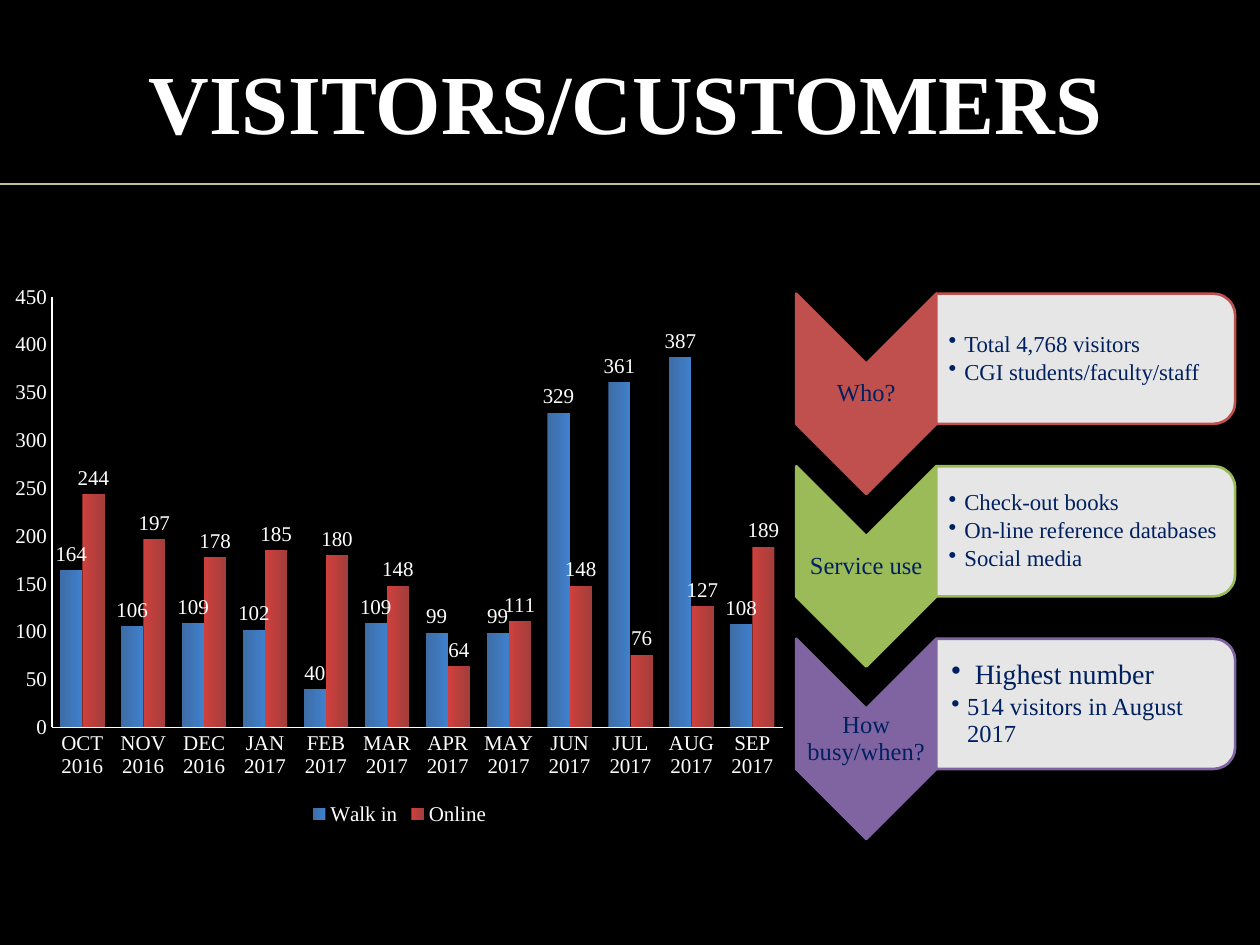
from lxml import etree
from pptx import Presentation
from pptx.chart.data import CategoryChartData
from pptx.dml.color import RGBColor
from pptx.enum.chart import XL_CHART_TYPE, XL_LABEL_POSITION, XL_LEGEND_POSITION, XL_TICK_MARK
from pptx.enum.shapes import MSO_CONNECTOR, MSO_SHAPE
from pptx.enum.text import MSO_ANCHOR, PP_ALIGN
from pptx.oxml import parse_xml
from pptx.oxml.ns import nsdecls, qn
from pptx.util import Pt

COLUMNS = XL_CHART_TYPE.COLUMN_CLUSTERED
OUTSIDE = XL_LABEL_POSITION.OUTSIDE_END
BOTTOM = XL_LEGEND_POSITION.BOTTOM
NO_TICK = XL_TICK_MARK.NONE
STRAIGHT = MSO_CONNECTOR.STRAIGHT
CHEVRON = MSO_SHAPE.CHEVRON
ROUNDED = MSO_SHAPE.ROUND_2_SAME_RECTANGLE
MIDDLE = MSO_ANCHOR.MIDDLE
CENTER, LEFT = PP_ALIGN.CENTER, PP_ALIGN.LEFT

FONT = "Times New Roman"
BLACK = RGBColor(0x00, 0x00, 0x00)
WHITE = RGBColor(0xFF, 0xFF, 0xFF)
NAVY = RGBColor(0x00, 0x20, 0x60)
TAN = RGBColor(0xC4, 0xBD, 0x97)
RED = RGBColor(0xC0, 0x50, 0x4D)
GREEN = RGBColor(0x9B, 0xBB, 0x59)
PURPLE = RGBColor(0x80, 0x64, 0xA2)
BLUE_DARK = RGBColor(0x3E, 0x6D, 0xA6)
BLUE_BRIGHT = RGBColor(0x3F, 0x80, 0xCD)
RED_BRIGHT = RGBColor(0xCF, 0x40, 0x3D)
RED_DARK = RGBColor(0xA2, 0x3E, 0x3B)

TITLE = "VISITORS/CUSTOMERS"
MONTHS = ["OCT 2016", "NOV 2016", "DEC 2016", "JAN 2017", "FEB 2017", "MAR 2017",
          "APR 2017", "MAY 2017", "JUN 2017", "JUL 2017", "AUG 2017", "SEP 2017"]
SERIES = [
    ("Walk in", [164, 106, 109, 102, 40, 109, 99, 99, 329, 361, 387, 108],
     (BLUE_DARK, BLUE_BRIGHT)),
    ("Online", [244, 197, 178, 185, 180, 148, 64, 111, 148, 76, 127, 189],
     (RED_BRIGHT, RED_DARK)),
]
ROWS = [
    ("Who?", RED, 7.2,
     [("Total 4,768 visitors", 13, 9), ("CGI students/faculty/staff", 13, 9)]),
    ("Service use", GREEN, 7.2,
     [("Check-out books", 13, 9), ("On-line reference databases", 13, 9),
      ("Social media", 13, 9)]),
    ("How busy/when?", PURPLE, 8.6,
     [("Highest number", 16, 13.5), ("514 visitors in August 2017", 14, 9)]),
]

ROW_TOP, ROW_PITCH = 167.8, 98.6
CHEVRON_X, CHEVRON_W, CHEVRON_H = 455, 80, 114.5
CARD_X, CARD_W, CARD_H = 535, 170.8, 74.4


def add_text(shapes, box, paragraphs, align, color, inset=0.9, bold=False, spacing=0.9):
    tf = shapes.add_textbox(*map(Pt, box)).text_frame
    tf.word_wrap = True
    tf.vertical_anchor = MIDDLE
    tf.margin_left = Pt(inset)
    tf.margin_top = tf.margin_right = tf.margin_bottom = Pt(0.9)
    for i, (text, size, indent, after) in enumerate(paragraphs):
        p = tf.paragraphs[0] if i == 0 else tf.add_paragraph()
        p.alignment = align
        p.line_spacing = spacing
        p.space_after = Pt(after)
        if indent:
            pPr = p._p.get_or_add_pPr()
            pPr.set("marL", str(Pt(indent)))
            pPr.set("indent", str(-Pt(indent)))
            etree.SubElement(pPr, qn("a:buChar")).set("char", "•")
        r = p.add_run()
        r.text = text
        r.font.name, r.font.size = FONT, Pt(size)
        r.font.bold, r.font.color.rgb = bold, color
    return tf


def add_turned(shapes, kind, x, y, w, h, fill, line):
    left, top = x + (w - h) / 2, y + (h - w) / 2
    sp = shapes.add_shape(kind, Pt(left), Pt(top), Pt(h), Pt(w))
    sp.rotation = 90
    sp.shadow.inherit = False
    sp.fill.solid()
    sp.fill.fore_color.rgb = fill
    sp.line.color.rgb = line
    sp.line.width = Pt(1.5)
    return sp


def add_row(shapes, y, label, color, inset, items):
    add_turned(shapes, CHEVRON, CHEVRON_X, y, CHEVRON_W, CHEVRON_H, color, color)
    add_text(shapes, (CHEVRON_X, y + CHEVRON_W / 2, CHEVRON_W, CHEVRON_H - CHEVRON_W),
             [(label, 14, 0, 4.9)], CENTER, NAVY)
    card = add_turned(shapes, ROUNDED, CARD_X, y, CARD_W, CARD_H, WHITE, color)
    tint = card.fill._xPr.find(qn("a:solidFill"))[0]
    etree.SubElement(tint, qn("a:alpha")).set("val", "90000")
    add_text(shapes, (CARD_X, y + 3.6, CARD_W - 3.6, CARD_H - 7.2),
             [(text, size, indent, size * 0.15) for text, size, indent in items],
             LEFT, NAVY, inset)


def add_visitor_chart(shapes):
    data = CategoryChartData()
    data.categories = MONTHS
    for name, values, _ in SERIES:
        data.add_series(name, values)
    chart = shapes.add_chart(COLUMNS, Pt(0), Pt(157), Pt(456.5), Pt(317.5), data).chart
    chart.font.name, chart.font.size = FONT, Pt(12)
    chart.font.color.rgb = WHITE
    chart.has_title = False
    chart.has_legend = True
    chart.legend.position = BOTTOM
    chart.legend.include_in_layout = False
    for axis in (chart.category_axis, chart.value_axis):
        axis.has_major_gridlines = False
        axis.major_tick_mark = axis.minor_tick_mark = NO_TICK
        axis.format.line.color.rgb = WHITE
        axis.format.line.width = Pt(0.75)
    chart.value_axis.minimum_scale = 0
    chart.value_axis.maximum_scale = 450
    chart.value_axis.major_unit = 50
    plot = chart.plots[0]
    plot.gap_width, plot.overlap = 75, 0
    plot.vary_by_categories = False
    for series, (_, _, colors) in zip(plot.series, SERIES):
        fill = series.format.fill
        fill.gradient()
        fill.gradient_angle = 0
        for stop, color in zip(fill.gradient_stops, colors):
            stop.color.rgb = color
        labels = series.data_labels
        labels.show_value = True
        labels.position = OUTSIDE
    area = chart._chartSpace.chart.plotArea
    for old in area.findall(qn("c:layout")):
        area.remove(old)
    spots = "".join(f'<c:{tag} val="{val}"/>' for tag, val in [
        ("layoutTarget", "inner"), ("xMode", "edge"), ("yMode", "edge"),
        ("x", 0.065), ("y", 0.04), ("w", 0.915), ("h", 0.775)])
    area.insert(0, parse_xml(f'<c:layout {nsdecls("c")}><c:manualLayout>{spots}'
                             '</c:manualLayout></c:layout>'))


def main():
    prs = Presentation()
    prs.slide_width, prs.slide_height = Pt(720), Pt(540)
    s = prs.slides.add_slide(prs.slide_layouts[6])
    s.background.fill.solid()
    s.background.fill.fore_color.rgb = BLACK

    rule = s.shapes.add_connector(STRAIGHT, Pt(0), Pt(105), Pt(720), Pt(105))
    rule.line.color.rgb = TAN
    rule.line.width = Pt(1)
    etree.SubElement(rule._element.spPr, qn("a:effectLst"))

    for i, row in enumerate(ROWS):
        add_row(s.shapes, ROW_TOP + i * ROW_PITCH, *row)

    tf = add_text(s.shapes, (54, 21, 607, 73.5), [(TITLE, 48, 0, 0)],
                  CENTER, WHITE, bold=True, spacing=1.0)
    tf.paragraphs[0].space_before = Pt(4)
    add_visitor_chart(s.shapes)
    prs.save("out.pptx")


if __name__ == "__main__":
    main()
